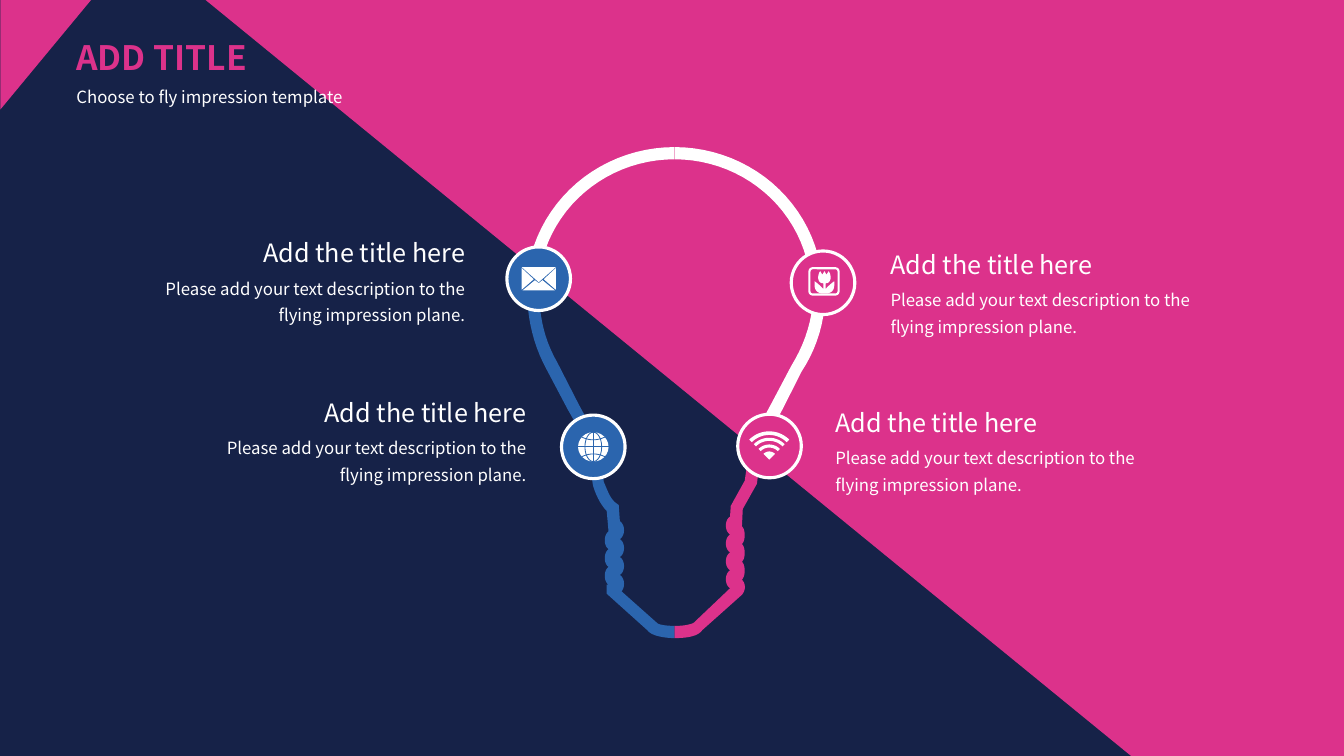
from math import cos, radians, sin

from lxml import etree
from pptx import Presentation
from pptx import util as u
from pptx.dml.color import RGBColor
from pptx.enum import shapes, text
from pptx.oxml.ns import qn

Pt = u.Pt
NAVY, PINK, BLUE, WHITE = "162248", "DC328B", "2B65AE", "FFFFFF"
FONT = "Noto Sans CJK SC"
MID_X = 481.8  # vertical axis of the bulb
HEADING = "Add the title here"
BODY = "Please add your text description to the flying impression plane."


def rgb(value):
    return RGBColor.from_string(value)


def paint(sp, fill=None, line=None, width=1):
    sp.shadow.inherit = False
    if fill:
        sp.fill.solid()
        sp.fill.fore_color.rgb = rgb(fill)
    else:
        sp.fill.background()
    if line:
        sp.line.color.rgb = rgb(line)
        sp.line.width = Pt(width)
    else:
        sp.line.fill.background()
    return sp


def preset(g, kind, cx, cy, w, h, **look):
    sp = g.add_shape(kind, Pt(cx - w / 2), Pt(cy - h / 2), Pt(w), Pt(h))
    return paint(sp, **look)


def flatten(steps, n=10):
    """Turn points (x, y) and cubic curves (x1, y1, x2, y2, x, y) into points."""
    pts = []
    for step in steps:
        if len(step) == 2:
            pts.append(step)
            continue
        ctrl = [pts[-1], step[:2], step[2:4], step[4:]]
        for t in (i / n for i in range(1, n + 1)):
            weights = ((1 - t) ** 3, 3 * t * (1 - t) ** 2, 3 * t * t * (1 - t), t ** 3)
            pts.append(tuple(sum(k * c[a] for k, c in zip(weights, ctrl)) for a in (0, 1)))
    return pts


def freeform(g, contours, dx=0, dy=0, close=True, **look):
    builder = None
    for steps in contours:
        pts = [(Pt(x + dx), Pt(y + dy)) for x, y in flatten(steps)]
        if builder is None:
            builder = g.build_freeform(*pts[0], scale=1.0)
        else:
            builder.move_to(*pts[0])
        builder.add_line_segments(pts[1:], close=close)
    return paint(builder.convert_to_shape(), **look)


def line(g, x1, y1, x2, y2, color, width):
    c = g.add_connector(shapes.MSO_CONNECTOR.STRAIGHT, Pt(x1), Pt(y1), Pt(x2), Pt(y2))
    c.line.color.rgb = rgb(color)
    c.line.width = Pt(width)
    etree.SubElement(c._element.spPr, qn("a:effectLst"))


def arc(cx, cy, rx, ry, start, end, n=24):
    """Points of an arc; angles in degrees, clockwise from the right."""
    angles = [radians(start + (end - start) * i / n) for i in range(n + 1)]
    return [(cx + rx * cos(a), cy + ry * sin(a)) for a in angles]


def bumps(x, y, depth, step, n):
    """Screw-thread edge of n bumps running vertically from (x, y)."""
    steps = [(x, y)]
    for i in range(n):
        a = y + i * step
        steps.append((x + 1.33 * depth, a + 0.2 * step, x + 1.33 * depth, a + 0.8 * step,
                      x, a + step))
    return steps


def label(s, words, x, y, w, h, size, color=WHITE, bold=False, wrap=True,
          right=False, spacing=None):
    tf = s.shapes.add_textbox(Pt(x), Pt(y), Pt(w), Pt(h)).text_frame
    tf.word_wrap = wrap
    tf.auto_size = text.MSO_AUTO_SIZE.SHAPE_TO_FIT_TEXT
    p = tf.paragraphs[0]
    p.alignment = text.PP_ALIGN.RIGHT if right else text.PP_ALIGN.LEFT
    if spacing:
        p.line_spacing = spacing
    r = p.add_run()
    r.text = words
    for name, value in {"name": FONT, "size": Pt(size), "bold": bold}.items():
        setattr(r.font, name, value)
    r.font.color.rgb = rgb(color)


def bulb(g):
    # Neck
    freeform(g, [[(581, 206.6), (581, 227.5, 575.3, 244.8, 565.2, 261.4), (551.5, 287.3),
                  (540.7, 307.4), (550.8, 307.4), (559.4, 291.6), (572.4, 265.7),
                  (583.9, 248.4, 589.7, 228.2, 589.7, 206.6)]], fill=WHITE)
    freeform(g, [[(376.6, 208.8), (376.6, 229, 381.6, 247.7, 390.2, 263.5), (405.4, 292.3),
                  (414, 307.4), (423.4, 307.4), (413.3, 288.7), (398.2, 259.2),
                  (389.5, 244.1, 385.2, 227.5, 385.2, 208.8)]], fill=BLUE)
    # Screw base
    freeform(g, [[(540, 307.4), (536.4, 315.4, 533.5, 322.6, 534.2, 328.3), (532, 343.4),
                  (522, 361.4), *bumps(521.5, 369, -3, 12.8, 4), (495.4, 445),
                  (492, 446.4, 488, 447.1, MID_X, 447.1), (MID_X, 455.8),
                  (486, 455.8, 498, 455.8, 501.8, 450), (528.5, 426.2),
                  (533, 423, 533, 417, 530, 414), *bumps(530, 414, 2, -12.7, 3),
                  (530.6, 363.6), (540.7, 345.6), (542.9, 328.3),
                  (542.2, 323.3, 545.8, 314.6, 550, 307.4)]], fill=PINK)
    freeform(g, [[(469.4, 445), (444.2, 422.6), *bumps(442.8, 423.5, 3, -12.8, 4),
                  (442, 360.7), (440, 359.3), (435.6, 356.4, 432.7, 347, 431.3, 344.2),
                  (429.8, 328.3), (429.8, 322.6, 427, 315.4, 423.4, 307.4), (414, 307.4),
                  (417.6, 314.6, 421.2, 323.3, 421.2, 328.3), (423.4, 345.6),
                  (423.4, 347, 427, 358.6, 433.4, 365), *bumps(434.7, 379.6, -2.7, 12.7, 3),
                  (433.4, 417.6), (433.4, 424.1), (462.2, 450),
                  (465.8, 455, 477, 455.8, MID_X, 455.8), (MID_X, 447.1),
                  (475, 447.1, 470, 446, 469.4, 445)]], fill=BLUE)
    # Glass dome: a quarter ring on each side of the axis
    for side in (180, 360):
        freeform(g, [arc(MID_X, 208.8, 106, 103.7, side, 270)
                     + arc(MID_X, 208.8, 97.4, 95, 270, side)], fill=WHITE)


def envelope(g, cx, cy):
    freeform(g, [[(-2.7, 1.1), (0, 3.2), (2.7, 1.1), (11.5, 8.3), (-11.5, 8.3)],
                 [(-12.2, -7.6), (-3.6, 0.4), (-12.2, 7.9)],
                 [(12.2, -7.6), (12.2, 7.9), (3.6, 0.4)],
                 [(-12.2, -8.3), (12.2, -8.3), (0, 2.5)]], cx, cy, fill=WHITE)


def globe(g, cx, cy):
    oval = shapes.MSO_SHAPE.OVAL
    preset(g, oval, cx, cy, 21.8, 21, fill=WHITE)
    preset(g, oval, cx, cy, 12, 21, line=BLUE, width=0.6)
    for side in (-1, 1):
        freeform(g, [[(-8.2, 7 * side), (-3, 4.4 * side, 3, 4.4 * side, 8.2, 7 * side)]],
                 cx, cy, close=False, line=BLUE, width=0.6)
    line(g, cx - 10.9, cy, cx + 10.9, cy, BLUE, 0.6)
    line(g, cx, cy - 10.5, cx, cy + 10.5, BLUE, 0.6)


def flower(g, cx, cy):
    frame = preset(g, shapes.MSO_SHAPE.ROUNDED_RECTANGLE, cx + 0.7, cy - 1, 20.8, 18.8,
                   line=WHITE, width=1.5)
    frame.adjustments[0] = 0.12
    bud = [(-3, -8.3), (-1.5, -5.8), (0, -8.3), (1.5, -5.8), (3, -8.3),
           (5, -6, 5.5, 0.4, 0.8, 0.4), (0.8, 7.6), (-0.8, 7.6), (-0.8, 0.4),
           (-5.5, 0.4, -5, -6, -3, -8.3)]
    leaves = [[(7 * k, -1.1), (7.4 * k, 4, 6.5 * k, 7.6, 0.8 * k, 7.6),
               (0.8 * k, 4.5), (3 * k, 2, 5 * k, 0.4, 7 * k, -1.1)] for k in (-1, 1)]
    freeform(g, [bud, *leaves], cx + 1, cy, fill=WHITE)


def wifi(g, cx, cy):
    bands = [(20.2, 17.6), (15.6, 13.4), (10.8, 8.6), (5.8, 0)]
    freeform(g, [arc(0, 0, a, a, 225, 315) + arc(0, 0, b, b, 315, 225) for a, b in bands],
             cx - 0.2, cy + 9.7, fill=WHITE)


def badge(s, icon, cx, cy, color):
    g = s.shapes.add_group_shape().shapes
    for size in (44, 45.4):
        preset(g, shapes.MSO_SHAPE.OVAL, cx, cy, size, size, fill=color, line=WHITE, width=2.25)
    icon(g, cx, cy)


def caption(s, edge, y, right):
    """Heading and description against a common left or right edge."""
    for words, top, w, h, size, spacing in ((HEADING, y, 180, 29, 18, None),
                                            (BODY, y + 25, 245.5, 44.6, 12, 1.3)):
        label(s, words, edge - w if right else edge, top, w, h, size,
              right=right, spacing=spacing)


def main():
    prs = Presentation()
    prs.slide_width, prs.slide_height = Pt(960), Pt(540)
    s = prs.slides.add_slide(prs.slide_layouts[6])
    s.background.fill.solid()
    s.background.fill.fore_color.rgb = rgb(NAVY)

    # Backdrop and title
    freeform(s.shapes, [[(146, -0.7), (960, -0.7), (960, 540), (808, 540)]], fill=PINK)
    label(s, "ADD TITLE", 47.5, 22.6, 142.5, 36, 24, color=PINK, bold=True, wrap=False)
    corner = preset(s.shapes, shapes.MSO_SHAPE.ISOSCELES_TRIANGLE, 32.8, 38.9, 78.5, 65,
                    fill=PINK)
    corner.adjustments[0] = 0
    corner.rotation = 90
    label(s, "Choose to fly impression template", 47.5, 54, 252, 26, 12, spacing=1.3)

    # Light bulb with its four badges
    bulb(s.shapes.add_group_shape().shapes)
    badge(s, envelope, 384.8, 199.1, BLUE)
    badge(s, globe, 423.8, 319.2, BLUE)
    badge(s, flower, 587.9, 202, PINK)
    badge(s, wifi, 549.7, 318.6, PINK)

    # Captions
    for edge, y, right in ((629, 174.4, False), (589.6, 287.3, False),
                           (339.4, 166, True), (383.2, 280.1, True)):
        caption(s, edge, y, right)

    prs.save("out.pptx")


if __name__ == "__main__":
    main()
